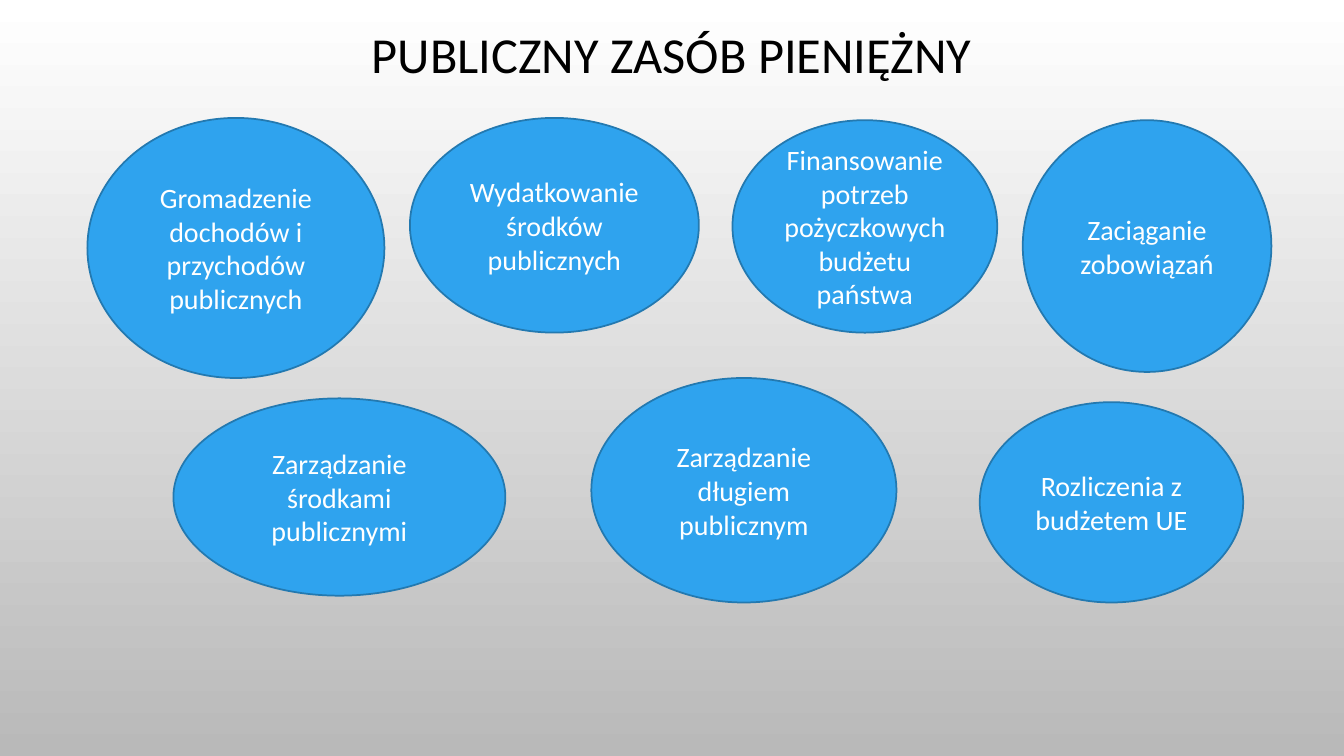
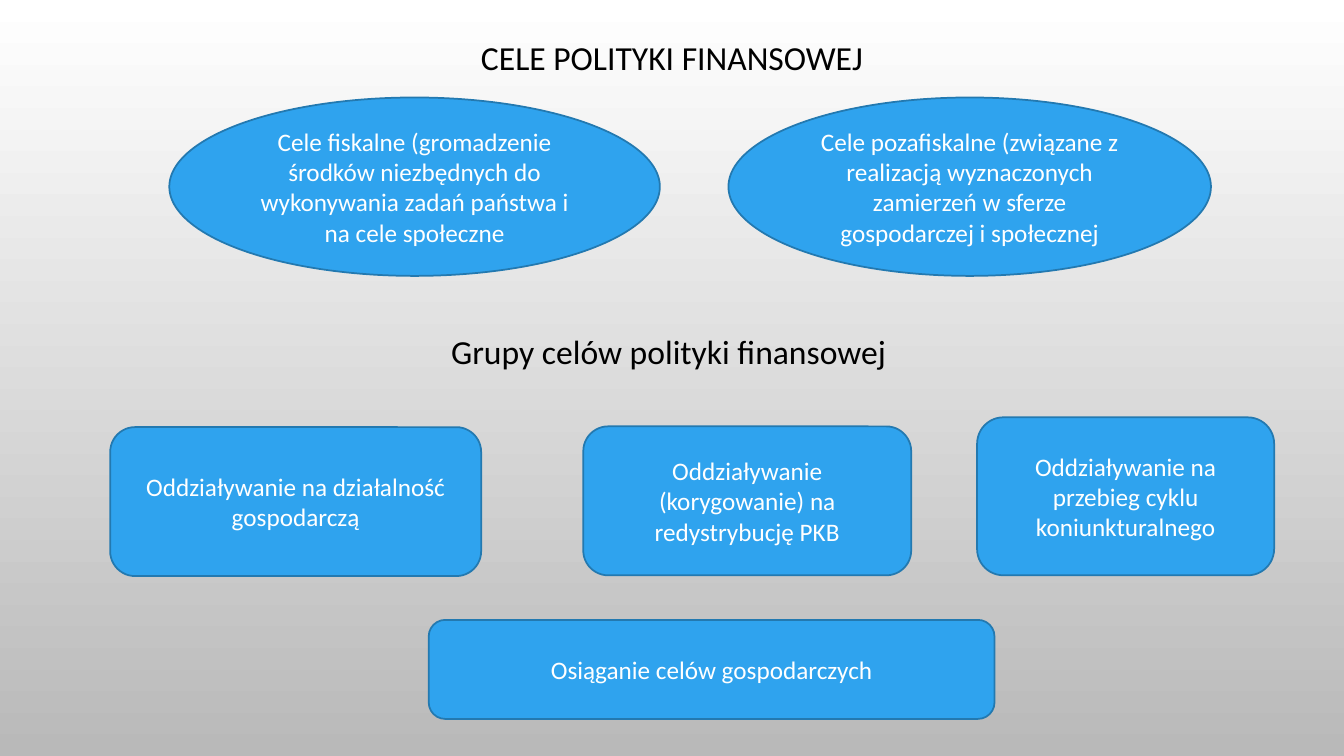
from dataclasses import dataclass

from pptx import Presentation
from pptx.dml.color import RGBColor
from pptx.enum.shapes import MSO_SHAPE
from pptx.enum.text import MSO_ANCHOR, MSO_AUTO_SIZE, PP_ALIGN
from pptx.util import Inches, Pt

ELLIPSE = MSO_SHAPE.OVAL
ROUNDED = MSO_SHAPE.ROUNDED_RECTANGLE
CENTER = PP_ALIGN.CENTER
MIDDLE = MSO_ANCHOR.MIDDLE
TOP = MSO_ANCHOR.TOP
NO_AUTOFIT = MSO_AUTO_SIZE.NONE
TITLE_ONLY = 5


@dataclass(frozen=True)
class Theme:
    font: str = "Calibri"
    ink: RGBColor = RGBColor(0x00, 0x00, 0x00)
    light: RGBColor = RGBColor(0xFF, 0xFF, 0xFF)
    fill: RGBColor = RGBColor(0x2F, 0xA3, 0xEE)
    outline: RGBColor = RGBColor(0x23, 0x79, 0xB0)
    shade: RGBColor = RGBColor(0xB9, 0xB9, 0xB9)
    outline_width: Pt = Pt(1.25)
    title: Pt = Pt(36)
    heading: Pt = Pt(24)
    large: Pt = Pt(20)
    body: Pt = Pt(18)


theme = Theme()
deck = Presentation()
deck.slide_width = Inches(13.33)
deck.slide_height = Inches(7.5)

background = deck.slide_master.background.fill
background.gradient()
background.gradient_angle = 270
for stop, color in zip(background.gradient_stops, (theme.light, theme.shade)):
    stop.color.rgb = color


def percent(left, top, width, height):
    across, down = deck.slide_width / 100, deck.slide_height / 100
    return [round(share * unit) for share, unit in
            zip((left, top, width, height), (across, down, across, down))]


def write(box, text, size, color, anchor=MIDDLE):
    frame = box.text_frame
    frame.text = text
    frame.word_wrap = True
    frame.auto_size = NO_AUTOFIT
    frame.vertical_anchor = anchor
    para = frame.paragraphs[0]
    para.alignment = CENTER
    para.font.name = theme.font
    para.font.size = size
    para.font.color.rgb = color
    return para


pages = [
    {
        "title": ("PUBLICZNY ZASÓB PIENIĘŻNY", theme.title, 3.1, 8.8),
        "size": theme.large,
        "shapes": [
            (ELLIPSE, "Gromadzenie dochodów i przychodów publicznych", 6.5, 15.6, 22.1, 34.4),
            (ELLIPSE, "Wydatkowanie środków publicznych", 30.5, 15.6, 21.5, 28.4),
            (ELLIPSE, "Finansowanie potrzeb pożyczkowych budżetu państwa", 54.5, 15.9, 19.7, 28.1),
            (ELLIPSE, "Zaciąganie zobowiązań", 76.1, 15.9, 18.5, 33.3),
            (ELLIPSE, "Zarządzanie środkami publicznymi", 12.9, 52.7, 24.7, 26.1),
            (ELLIPSE, "Zarządzanie długiem publicznym", 44, 50, 22.7, 29.7),
            (ELLIPSE, "Rozliczenia z budżetem UE", 72.9, 53.2, 19.6, 26.5),
        ],
    },
    {
        "title": ("CELE POLITYKI FINANSOWEJ", theme.heading, 3.9, 8.1),
        "size": theme.body,
        "shapes": [
            (ELLIPSE, "Cele fiskalne (gromadzenie środków niezbędnych do wykonywania "
                      "zadań państwa i na cele społeczne", 12.6, 12.9, 36.5, 23.6),
            (ELLIPSE, "Cele pozafiskalne (związane z realizacją wyznaczonych zamierzeń "
                      "w sferze gospodarczej i społecznej", 54.2, 12.9, 35.9, 23.6),
            (ROUNDED, "Oddziaływanie na działalność gospodarczą", 8.2, 56.5, 27.6, 19.7),
            (ROUNDED, "Oddziaływanie (korygowanie) na redystrybucję PKB", 43.4, 56.4, 24.4, 19.7),
            (ROUNDED, "Oddziaływanie na przebieg cyklu koniunkturalnego", 72.7, 55.2, 22.1, 20.9),
            (ROUNDED, "Osiąganie celów gospodarczych", 31.9, 82, 42.1, 13.1),
        ],
    },
]

for content in pages:
    page = deck.slides.add_slide(deck.slide_layouts[TITLE_ONLY])
    text, size, top, height = content["title"]
    title = page.shapes.title
    title.left, title.top, title.width, title.height = percent(7.5, top, 85, height)
    write(title, text, size, theme.ink).line_spacing = 0.9

    for kind, text, *place in content["shapes"]:
        shape = page.shapes.add_shape(kind, *percent(*place))
        shape.shadow.inherit = False
        shape.fill.solid()
        shape.fill.fore_color.rgb = theme.fill
        shape.line.color.rgb = theme.outline
        shape.line.width = theme.outline_width
        write(shape, text, content["size"], theme.light)

subtitle = page.shapes.add_textbox(*percent(27.8, 43.1, 43.9, 6.7))
write(subtitle, "Grupy celów polityki finansowej", theme.heading, theme.ink, TOP)

deck.save("out.pptx")
